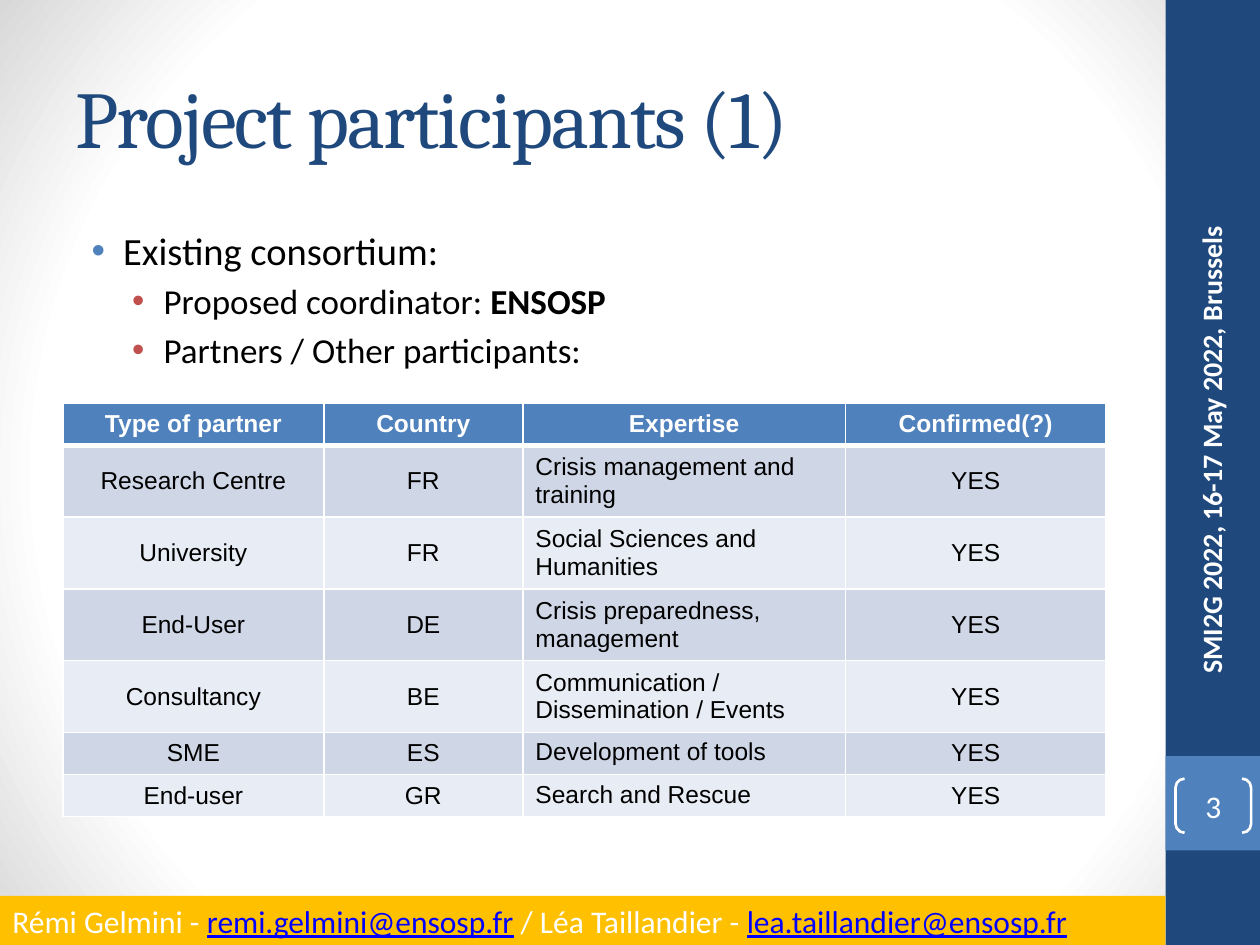
import pptx
import pptx.util
import pptx.dml.color
import pptx.enum.shapes
import pptx.enum.text
import pptx.oxml.ns
import lxml.etree

Inches = pptx.util.Inches
Pt = pptx.util.Pt
SHAPE = pptx.enum.shapes.MSO_SHAPE
ALIGN = pptx.enum.text.PP_ALIGN
ANCHOR = pptx.enum.text.MSO_ANCHOR

NAVY, BLUE, RED, GOLD = "1F497D", "4F81BD", "C0504D", "FFC000"
WHITE, BLACK, LINK = "FFFFFF", "000000", "0000FF"
BANDS = ("CFD7E7", "E8ECF4")

HEADS = ("Type of partner", "Country", "Expertise", "Confirmed(?)")
PARTNERS = (
    ("Research Centre", "FR", "Crisis management and training"),
    ("University", "FR", "Social Sciences and Humanities"),
    ("End-User", "DE", "Crisis preparedness, management"),
    ("Consultancy", "BE", "Communication / Dissemination / Events"),
    ("SME", "ES", "Development of tools"),
    ("End-user", "GR", "Search and Rescue"),
)
COLS = (2.07, 1.58, 2.56, 2.07)
ROWS = (0.33, 0.57, 0.57, 0.57, 0.57, 0.33, 0.33)


def color(code):
    return pptx.dml.color.RGBColor.from_string(code)


def node(parent, tag, **attrs):
    """Append a DrawingML element with the given attributes."""
    name = pptx.oxml.ns.qn("a:" + tag)
    values = {key: str(value) for key, value in attrs.items()}
    return lxml.etree.SubElement(parent, name, values)


def add_run(para, text, size, font="Calibri", tint=WHITE, bold=False, line=False):
    run = para.add_run()
    run.text = text
    run.font.size = Pt(size)
    run.font.name = font
    run.font.bold = bold
    run.font.underline = line
    run.font.color.rgb = color(tint)
    return run


def add_box(slide, box, anchor=ANCHOR.TOP):
    shape = slide.shapes.add_textbox(*map(Inches, box))
    shape.text_frame.word_wrap = True
    shape.text_frame.vertical_anchor = anchor
    return shape


def add_rect(slide, box, fill):
    shape = slide.shapes.add_shape(SHAPE.RECTANGLE, *map(Inches, box))
    shape.shadow.inherit = False
    shape.fill.solid()
    shape.fill.fore_color.rgb = color(fill)
    shape.line.fill.background()
    return shape


def paint_back(slide):
    """Fill the background with a round gradient, white to grey."""
    slide.background.fill.gradient()
    grad = slide.element.find(".//" + pptx.oxml.ns.qn("a:gradFill"))
    for child in list(grad):
        grad.remove(child)
    stops = node(grad, "gsLst")
    for place, tint in ((0, WHITE), (75, WHITE), (100, "D8D8D8")):
        node(node(stops, "gs", pos=place * 1000), "srgbClr", val=tint)
    shade = node(grad, "path", path="circle")
    node(shade, "fillToRect", l=50000, t=50000, r=50000, b=50000)


def add_title(slide, box):
    frame = add_box(slide, box, ANCHOR.MIDDLE).text_frame
    run = add_run(frame.paragraphs[0], "Project participants (1)", 46, "Cambria", NAVY)
    run.font._element.set("spc", "-100")


def add_bullet(para, indent, tint):
    props = para._p.get_or_add_pPr()
    props.set("marL", str(Inches(indent)))
    props.set("indent", str(Inches(-0.25)))
    node(node(props, "buClr"), "srgbClr", val=tint)
    node(props, "buFont", typeface="Arial")
    node(props, "buChar", char="•")


def add_body(slide, box):
    frame = add_box(slide, box).text_frame
    first = frame.paragraphs[0]
    add_bullet(first, 0.38, BLUE)
    add_run(first, "Existing consortium:", 22, tint=BLACK)
    for label, name in (("Proposed coordinator: ", "ENSOSP"),
                        ("Partners / Other participants:", None)):
        para = frame.add_paragraph()
        para.level = 1
        para.space_before = Pt(4)
        add_bullet(para, 0.7, RED)
        add_run(para, label, 20, tint=BLACK)
        if name:
            add_run(para, name, 20, tint=BLACK, bold=True)


def set_cell(cell, text, fill, head, align):
    props = cell._tc.get_or_add_tcPr()
    for side in ("lnL", "lnR", "lnT", "lnB"):
        width = 3 if head and side == "lnB" else 1
        edge = node(props, side, w=Pt(width))
        node(node(edge, "solidFill"), "srgbClr", val=WHITE)
    cell.fill.solid()
    cell.fill.fore_color.rgb = color(fill)
    cell.vertical_anchor = ANCHOR.MIDDLE
    para = cell.text_frame.paragraphs[0]
    para.alignment = align
    add_run(para, text, 14, "Arial", WHITE if head else BLACK, head)


def add_grid(slide, left, top):
    data = [HEADS] + [row + ("YES",) for row in PARTNERS]
    frame = slide.shapes.add_table(len(ROWS), len(COLS), Inches(left), Inches(top),
                                   Inches(sum(COLS)), Inches(sum(ROWS)))
    table = frame.table
    for col, width in zip(table.columns, COLS):
        col.width = Inches(width)
    for i, (row, height) in enumerate(zip(table.rows, ROWS)):
        row.height = Inches(height)
        head = i == 0
        fill = BLUE if head else BANDS[(i - 1) % 2]
        for j, text in enumerate(data[i]):
            align = ALIGN.LEFT if j == 2 and not head else ALIGN.CENTER
            set_cell(table.cell(i, j), text, fill, head, align)
            if j == 2 and i > 4:
                table.cell(i, j).vertical_anchor = ANCHOR.TOP


def add_side(slide, left, top, width, height):
    """Side band with the page number and the turned event name."""
    add_rect(slide, (left, top, width, height), NAVY)
    add_rect(slide, (left, top + 6, width, width), BLUE)

    page = slide.shapes.add_shape(SHAPE.DOUBLE_BRACKET, Inches(left + 0.08),
                                  Inches(top + 6.18), Inches(0.6), Inches(0.43))
    page.shadow.inherit = False
    page.fill.background()
    page.line.color.rgb = color(WHITE)
    page.line.width = Pt(1.5)
    frame = page.text_frame
    frame.margin_left = frame.margin_right = 0
    frame.margin_top = frame.margin_bottom = 0
    frame.vertical_anchor = ANCHOR.MIDDLE
    frame.paragraphs[0].alignment = ALIGN.CENTER
    add_run(frame.paragraphs[0], "3", 18)

    event = add_box(slide, (left - 1.79, top + 3.65, 4.3, 0.4), ANCHOR.MIDDLE)
    event.rotation = 270
    para = event.text_frame.paragraphs[0]
    para.alignment = ALIGN.RIGHT
    add_run(para, "SMI2G 2022, 16-17 May 2022, Brussels", 16, bold=True)


def add_foot(slide, box):
    frame = add_rect(slide, box, GOLD).text_frame
    frame.word_wrap = True
    frame.vertical_anchor = ANCHOR.TOP
    para = frame.paragraphs[0]
    para.alignment = ALIGN.LEFT
    for name, mail in (("Rémi Gelmini - ", "remi.gelmini@ensosp.fr"),
                       (" / Léa Taillandier - ", "lea.taillandier@ensosp.fr")):
        add_run(para, name, 18)
        add_run(para, mail, 18, tint=LINK, line=True)


def main():
    deck = pptx.Presentation()
    deck.slide_width, deck.slide_height = Inches(10), Inches(7.5)
    slide = deck.slides.add_slide(deck.slide_layouts[6])
    paint_back(slide)
    add_side(slide, 9.25, 0, 0.75, 7.5)
    add_title(slide, (0.5, 0.3, 8.33, 1.25))
    add_body(slide, (0.5, 1.75, 8.33, 5.25))
    add_foot(slide, (0, 7.11, 9.25, 0.4))
    add_grid(slide, 0.5, 3.2)
    deck.save("out.pptx")


if __name__ == "__main__":
    main()
